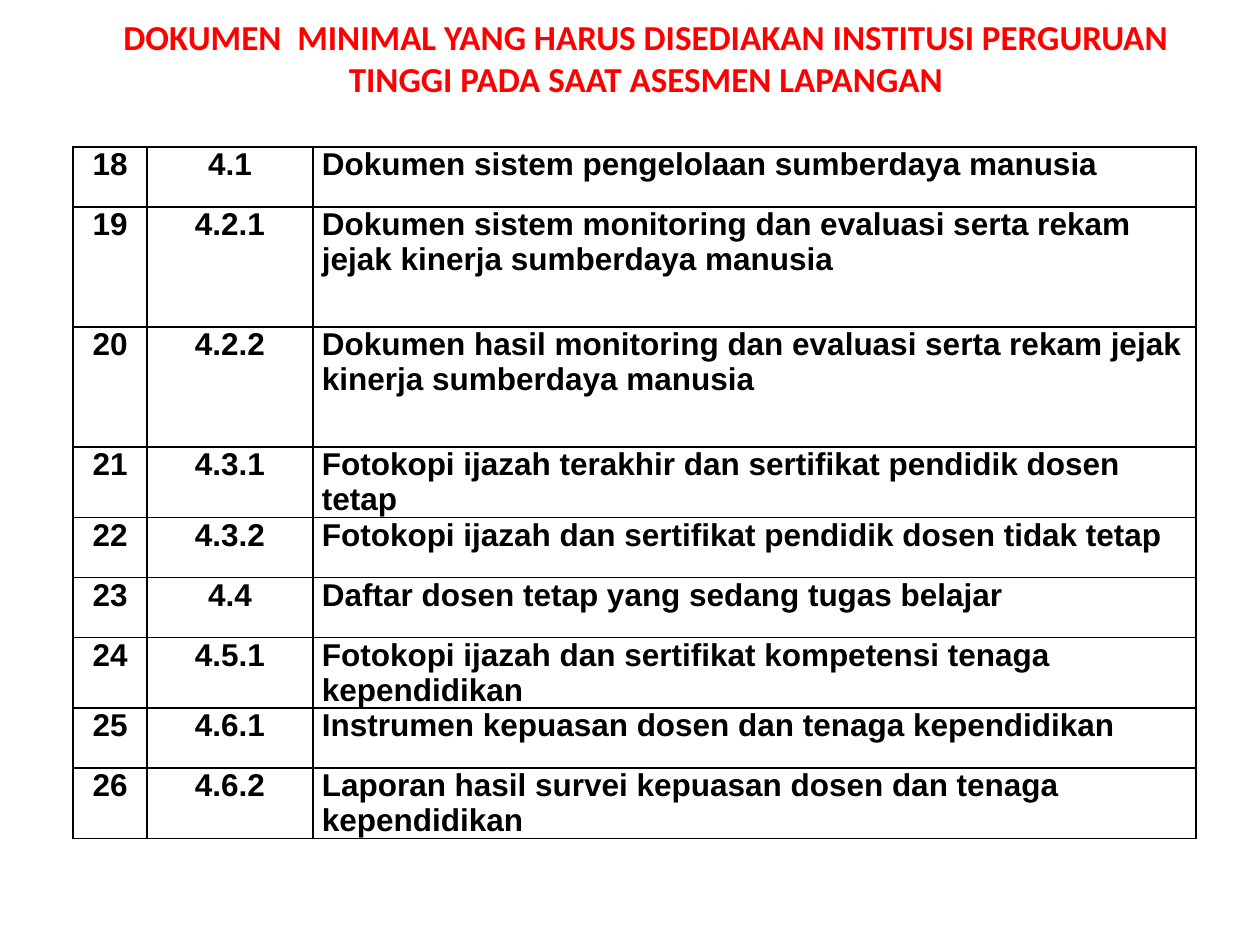
from lxml.etree import SubElement
from pptx import Presentation
from pptx.dml.color import RGBColor
from pptx.enum.text import MSO_ANCHOR, PP_ALIGN
from pptx.oxml.ns import qn
from pptx.util import Emu, Pt

PX_PER_INCH = 126
TITLE = ("DOKUMEN  MINIMAL YANG HARUS DISEDIAKAN INSTITUSI PERGURUAN "
         "TINGGI PADA SAAT ASESMEN LAPANGAN")
FIRST_NUMBER = 18
COLUMN_WIDTHS = (74, 166, 883)
ROW_HEIGHT = 60
DOCUMENTS = (
    ("4.1", "Dokumen sistem pengelolaan sumberdaya manusia", 1),
    ("4.2.1", "Dokumen sistem monitoring dan evaluasi serta rekam jejak "
              "kinerja sumberdaya manusia", 2),
    ("4.2.2", "Dokumen hasil monitoring dan evaluasi serta rekam jejak "
              "kinerja sumberdaya manusia", 2),
    ("4.3.1", "Fotokopi ijazah terakhir dan sertifikat pendidik dosen tetap", 1),
    ("4.3.2", "Fotokopi ijazah dan sertifikat pendidik dosen tidak tetap", 1),
    ("4.4", "Daftar dosen tetap yang sedang tugas belajar", 1),
    ("4.5.1", "Fotokopi ijazah dan sertifikat kompetensi tenaga kependidikan", 1),
    ("4.6.1", "Instrumen kepuasan dosen dan tenaga kependidikan", 1),
    ("4.6.2", "Laporan hasil survei kepuasan dosen dan tenaga kependidikan", 1),
)


def px(length):
    return Emu(round(length * 914400 / PX_PER_INCH))


def color(value):
    return RGBColor.from_string(value)


def add_run(paragraph, text, font, size, shade, align):
    paragraph.alignment = align
    run = paragraph.add_run()
    run.text = text
    run.font.name = font
    run.font.size = Pt(size)
    run.font.bold = True
    run.font.color.rgb = color(shade)


def add_title(slide):
    title = slide.shapes.add_textbox(px(84), px(32), px(1124), px(94))
    frame = title.text_frame
    frame.word_wrap = True
    frame.vertical_anchor = MSO_ANCHOR.MIDDLE
    frame.margin_top, frame.margin_bottom = px(6), px(49)
    add_run(frame.paragraphs[0], TITLE, "Calibri", 20, "FF0000", PP_ALIGN.CENTER)


def add_borders(cell, shade):
    properties = cell._tc.get_or_add_tcPr()
    for index, side in enumerate(("lnL", "lnR", "lnT", "lnB")):
        line = SubElement(properties, qn(f"a:{side}"), w=str(Pt(1)))
        fill = SubElement(line, qn("a:solidFill"))
        SubElement(fill, qn("a:srgbClr"), val=shade)
        properties.remove(line)
        properties.insert(index, line)


def fill_cell(cell, text, align):
    cell.margin_left = cell.margin_right = px(9)
    cell.margin_top = cell.margin_bottom = 0
    cell.vertical_anchor = MSO_ANCHOR.TOP
    cell.fill.background()
    add_borders(cell, "000000")
    add_run(cell.text_frame.paragraphs[0], text, "Arial", 18, "000000", align)


def add_document_table(slide):
    height = ROW_HEIGHT * sum(units for _, _, units in DOCUMENTS)
    table = slide.shapes.add_table(
        len(DOCUMENTS), len(COLUMN_WIDTHS),
        px(73), px(147), px(sum(COLUMN_WIDTHS)), px(height)).table
    table.first_row = table.horz_banding = False
    for column, width in zip(table.columns, COLUMN_WIDTHS):
        column.width = px(width)
    for index, (section, document, units) in enumerate(DOCUMENTS):
        row = table.rows[index]
        row.height = px(ROW_HEIGHT * units)
        number, code, name = row.cells
        fill_cell(number, str(FIRST_NUMBER + index), PP_ALIGN.CENTER)
        fill_cell(code, section, PP_ALIGN.CENTER)
        fill_cell(name, document, PP_ALIGN.LEFT)


def main():
    presentation = Presentation()
    presentation.slide_width, presentation.slide_height = px(1260), px(945)
    slide = presentation.slides.add_slide(presentation.slide_layouts[6])
    add_document_table(slide)
    add_title(slide)
    presentation.save("out.pptx")


if __name__ == "__main__":
    main()
